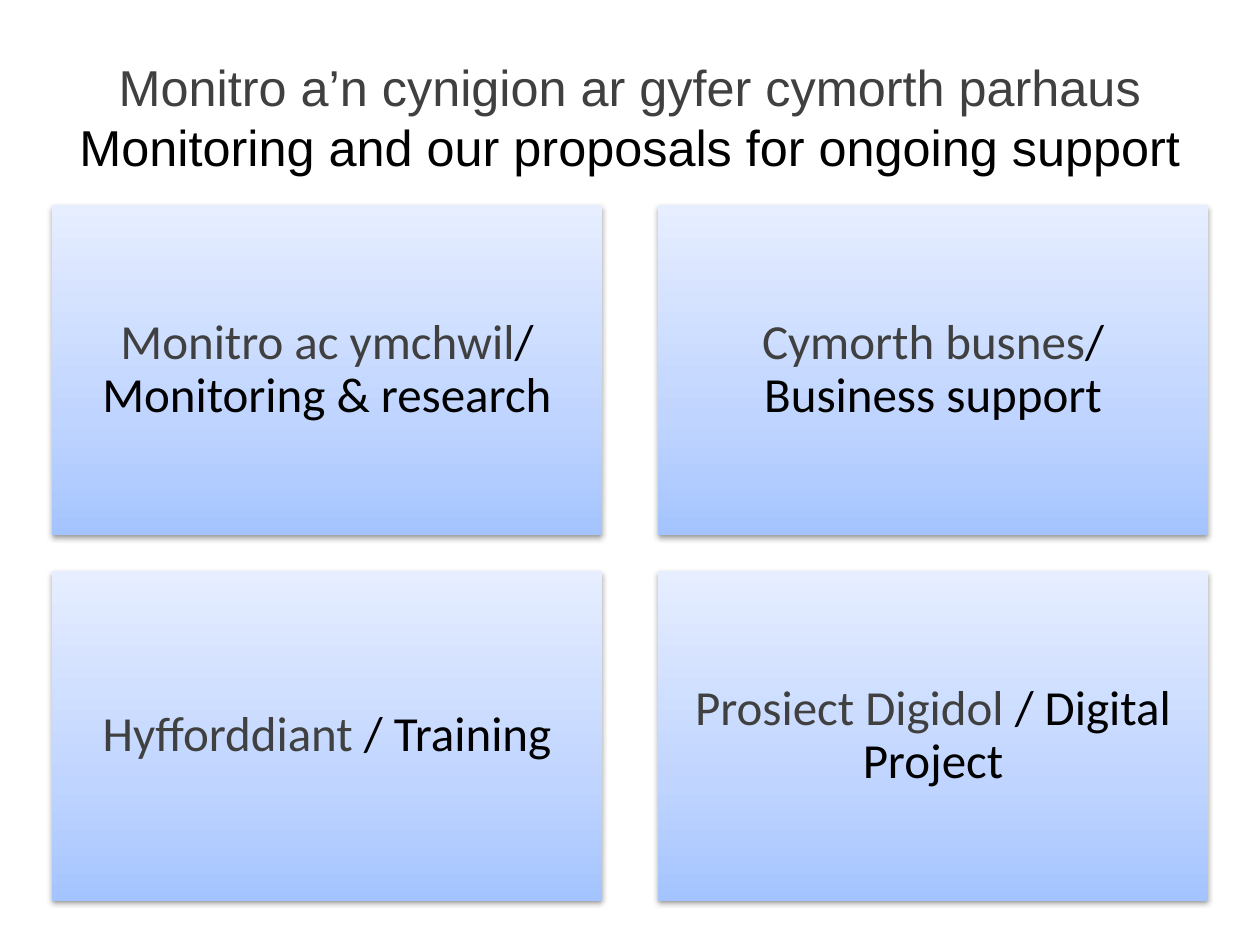
from dataclasses import dataclass

from lxml import etree
from pptx import Presentation
from pptx.dml.color import RGBColor
from pptx.enum import shapes, text
from pptx.oxml import parse_xml
from pptx.util import Inches, Pt

DRAWING = "http://schemas.openxmlformats.org/drawingml/2006/main"
GREY, BLACK = "404040", "000000"
STOPS = [(0, "A4C4FF"), (35, "BFD4FF"), (100, "E6EEFF")]
LEFT, TOP = 0.41, 1.63
CARD_WIDTH, CARD_HEIGHT = 4.37, 2.62
COLUMN_STEP, ROW_STEP = CARD_WIDTH + 0.44, CARD_HEIGHT + 0.28


@dataclass(frozen=True)
class Card:
    column: int
    row: int
    welsh: str
    english: str


CARDS = [
    Card(0, 0, "Monitro ac ymchwil", "/ Monitoring & research"),
    Card(1, 0, "Cymorth busnes", "/ Business support"),
    Card(0, 1, "Hyfforddiant", " / Training"),
    Card(1, 1, "Prosiect Digidol ", "/ Digital Project"),
]


def color(value: str) -> RGBColor:
    return RGBColor.from_string(value)


def add_span(para, words: str, font: str, size: float, hue: str) -> None:
    span = para.add_run()
    span.text = words
    span.font.name = font
    span.font.size = Pt(size)
    span.font.color.rgb = color(hue)


def centre(frame, inset: float):
    frame.word_wrap = True
    frame.vertical_anchor = text.MSO_ANCHOR.MIDDLE
    frame.margin_left = frame.margin_right = Inches(inset)
    frame.margin_top = frame.margin_bottom = Inches(inset)
    para = frame.paragraphs[0]
    para.alignment = text.PP_ALIGN.CENTER
    return para


def add_gradient_and_shadow(box) -> None:
    box.line.fill.background()
    box.shadow.inherit = False
    stops = "".join(
        f'<a:gs pos="{share * 1000}"><a:srgbClr val="{hue}"/></a:gs>'
        for share, hue in STOPS
    )
    gradient = parse_xml(
        f'<a:gradFill xmlns:a="{DRAWING}" rotWithShape="1"><a:gsLst>{stops}</a:gsLst>'
        '<a:lin ang="16200000" scaled="0"/></a:gradFill>'
    )
    properties = box.element.spPr
    properties.find(f"{{{DRAWING}}}prstGeom").addnext(gradient)
    effects = properties.find(f"{{{DRAWING}}}effectLst")
    shadow = etree.SubElement(
        effects, f"{{{DRAWING}}}outerShdw",
        blurRad=str(Pt(3.1)), dist=str(Pt(1.6)), dir="5400000", rotWithShape="0",
    )
    hue = etree.SubElement(shadow, f"{{{DRAWING}}}srgbClr", val=BLACK)
    etree.SubElement(hue, f"{{{DRAWING}}}alpha", val="38000")


def add_title(page) -> None:
    box = page.shapes.add_textbox(Inches(0.5), Inches(0.3), Inches(9), Inches(1.25))
    para = centre(box.text_frame, 0.1)
    add_span(para, "Monitro a’n cynigion ar gyfer cymorth parhaus", "Arial", 28.8, GREY)
    para.add_line_break()
    add_span(para, "Monitoring and our proposals for ongoing support", "Arial", 28.8, BLACK)


def add_card(page, card: Card) -> None:
    box = page.shapes.add_shape(
        shapes.MSO_SHAPE.RECTANGLE,
        Inches(LEFT + card.column * COLUMN_STEP),
        Inches(TOP + card.row * ROW_STEP),
        Inches(CARD_WIDTH),
        Inches(CARD_HEIGHT),
    )
    add_gradient_and_shadow(box)
    para = centre(box.text_frame, 0.12)
    para.line_spacing = 0.9
    add_span(para, card.welsh, "Calibri", 28, GREY)
    add_span(para, card.english, "Calibri", 28, BLACK)


def main() -> None:
    deck = Presentation()
    deck.slide_width, deck.slide_height = Inches(10), Inches(7.5)
    page = deck.slides.add_slide(deck.slide_layouts[6])
    add_title(page)
    for card in CARDS:
        add_card(page, card)
    deck.save("out.pptx")


if __name__ == "__main__":
    main()
